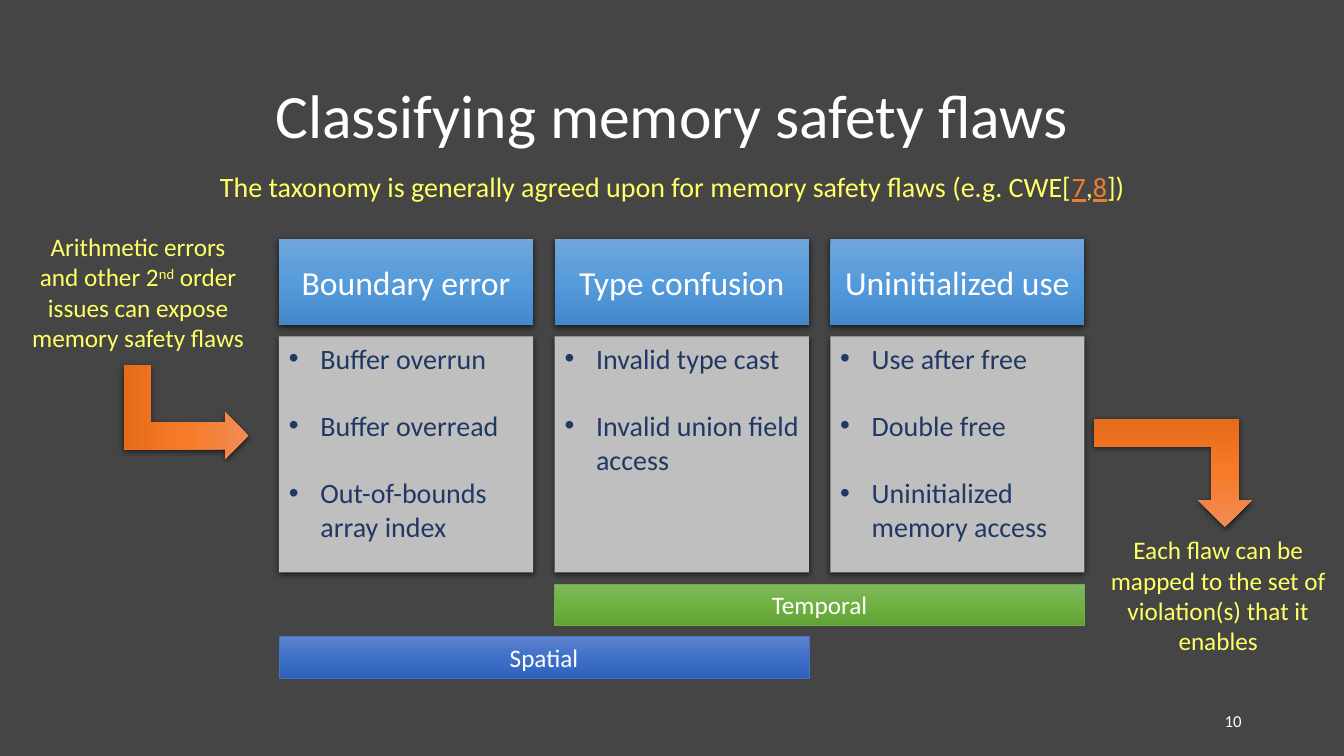
from copy import deepcopy

from lxml import etree
from pptx import Presentation
from pptx.dml.color import RGBColor
from pptx.enum.shapes import MSO_SHAPE
from pptx.enum.text import MSO_ANCHOR, MSO_AUTO_SIZE, PP_ALIGN
from pptx.oxml.ns import qn
from pptx.util import Pt

RECTANGLE, BENT_ARROW = MSO_SHAPE.RECTANGLE, MSO_SHAPE.BENT_UP_ARROW
TOP, MIDDLE = MSO_ANCHOR.TOP, MSO_ANCHOR.MIDDLE
LEFT, CENTER, RIGHT = PP_ALIGN.LEFT, PP_ALIGN.CENTER, PP_ALIGN.RIGHT
FIT_SHAPE, NO_FIT = MSO_AUTO_SIZE.SHAPE_TO_FIT_TEXT, MSO_AUTO_SIZE.NONE

CHARCOAL = RGBColor(0x45, 0x45, 0x45)
WHITE = RGBColor(0xFF, 0xFF, 0xFF)
YELLOW = RGBColor(0xFF, 0xFF, 0x66)
ORANGE = RGBColor(0xED, 0x7D, 0x31)
SILVER = RGBColor(0xBF, 0xBF, 0xBF)
NAVY = RGBColor(0x20, 0x38, 0x64)
GREEN = RGBColor(0x70, 0xAD, 0x47)
BLUE = RGBColor(0x44, 0x72, 0xC4)
# Gradients run from top to bottom
SKY_BLEND = RGBColor(0x71, 0xA6, 0xDB), RGBColor(0x55, 0x9B, 0xDB), RGBColor(0x44, 0x8A, 0xCA)
GREEN_BLEND = RGBColor(0x81, 0xB8, 0x61), RGBColor(0x6F, 0xB2, 0x42), RGBColor(0x62, 0xA3, 0x36)
BLUE_BLEND = RGBColor(0x61, 0x83, 0xCB), RGBColor(0x3E, 0x70, 0xCA), RGBColor(0x30, 0x62, 0xBB)
ORANGE_BLEND = RGBColor(0xF1, 0x8C, 0x57), RGBColor(0xF6, 0x7B, 0x28), RGBColor(0xE5, 0x6C, 0x19)


class SlideBuilder:
    font_name = "Calibri"

    def __init__(self, page):
        self.page = page
        page.background.fill.solid()
        page.background.fill.fore_color.rgb = CHARCOAL

    def add_text(self, box, paragraphs, size, color, align=CENTER, anchor=MIDDLE,
                 bullets=False, gap=0, **frame_format):
        """Each paragraph is a string or a list of (text, font format) pairs."""
        frame = box.text_frame
        frame_format = {"word_wrap": True, "vertical_anchor": anchor, **frame_format}
        for name, value in frame_format.items():
            setattr(frame, name, value)
        for index, content in enumerate(paragraphs):
            para = frame.paragraphs[0] if index == 0 else frame.add_paragraph()
            para.alignment = align
            para.space_before = Pt(gap if index else 0)
            if bullets:
                self.bullet(para)
            for text, extra in [(content, {})] if isinstance(content, str) else content:
                span = para.add_run()
                span.text = text
                font_format = {"name": self.font_name, "size": Pt(size), "color": color, **extra}
                for name, value in font_format.items():
                    if name == "color":
                        span.font.color.rgb = value
                    elif name == "baseline":
                        span._r.get_or_add_rPr().set(name, value)
                    else:
                        setattr(span.font, name, value)

    def bullet(self, para):
        properties = para._p.get_or_add_pPr()
        properties.set("marL", str(Pt(22.5)))
        properties.set("indent", str(-Pt(22.5)))
        etree.SubElement(properties, qn("a:buFont")).set("typeface", "Arial")
        etree.SubElement(properties, qn("a:buChar")).set("char", "•")

    def title(self, place, text):
        box = self.page.shapes.title
        for name, value in zip(("left", "top", "width", "height"), place):
            setattr(box, name, Pt(value))
        self.add_text(box, [text], 44, WHITE, auto_size=NO_FIT)

    def label(self, place, paragraphs, size, color, **text_format):
        box = self.page.shapes.add_textbox(*map(Pt, place))
        self.add_text(box, paragraphs, size, color, **text_format)
        return box

    def shape(self, kind, place, fill, line=None, shadow=True):
        """Fill is one colour or a tuple of three gradient colours."""
        shape = self.page.shapes.add_shape(kind, *map(Pt, place))
        if isinstance(fill, RGBColor):
            shape.fill.solid()
            shape.fill.fore_color.rgb = fill
        else:
            self.blend(shape, fill)
        if line is None:
            shape.line.fill.background()
        else:
            shape.line.color.rgb = line
            shape.line.width = Pt(0.5)
        shape.shadow.inherit = False
        if shadow:
            self.drop_shadow(shape)
        return shape

    def blend(self, shape, colors):
        shape.fill.gradient()
        shape.fill.gradient_angle = 270
        stop_list = shape._element.spPr.find(".//" + qn("a:gsLst"))
        stop_list.append(deepcopy(stop_list[-1]))
        for stop, color, position in zip(shape.fill.gradient_stops, colors, (0, 0.5, 1)):
            stop.color.rgb = color
            stop.position = position

    def drop_shadow(self, shape):
        effects = shape._element.spPr.find(qn("a:effectLst"))
        shadow = etree.SubElement(effects, qn("a:outerShdw"), blurRad=str(Pt(4.5)),
                                  dist=str(Pt(1.5)), dir="5400000", algn="ctr", rotWithShape="0")
        black = etree.SubElement(shadow, qn("a:srgbClr"), val="000000")
        etree.SubElement(black, qn("a:alpha"), val="63000")

    def bent_arrow(self, place, shaft=0.25, rotation=0, flip=False):
        arrow = self.shape(BENT_ARROW, place, ORANGE_BLEND)
        for index, value in enumerate((shaft, 0.25, 0.25)):
            arrow.adjustments[index] = value
        arrow.rotation = rotation
        if flip:
            arrow._element.spPr.find(qn("a:xfrm")).set("flipV", "1")
        return arrow

    def group(self, *shapes):
        self.page.shapes.add_group_shape(shapes)


def main():
    deck = Presentation()
    deck.slide_width, deck.slide_height = Pt(960), Pt(540)
    slide = SlideBuilder(deck.slides.add_slide(deck.slide_layouts[5]))

    # Title, introduction and page number
    slide.title((66, 28.8, 828, 104.4), "Classifying memory safety flaws")
    link = {"color": ORANGE, "underline": True}
    intro = [("The taxonomy is generally agreed upon for memory safety flaws (e.g. CWE[", {}),
             ("7", link), (",", {}), ("8", link), ("])", {})]
    slide.label((146.6, 117.7, 666.8, 31.5), [intro], 20, YELLOW,
                anchor=TOP, word_wrap=False, auto_size=FIT_SHAPE)
    slide.label((636, 500.5, 258, 28.8), ["10"], 12, WHITE, align=RIGHT)

    # Flaw classes with their examples
    flaws = {
        "Boundary error": ["Buffer overrun", "Buffer overread", "Out-of-bounds array index"],
        "Type confusion": ["Invalid type cast", "Invalid union field access"],
        "Uninitialized use": ["Use after free", "Double free", "Uninitialized memory access"],
    }
    first_left, column_width, pitch = 199.3, 181.6, 196.9
    column_lefts = [first_left + pitch * column for column in range(len(flaws))]
    for left, (name, examples) in zip(column_lefts, flaws.items()):
        header = slide.shape(RECTANGLE, (left, 170.6, column_width, 61.4), SKY_BLEND)
        slide.add_text(header, [name], 24, WHITE)
        card = slide.shape(RECTANGLE, (left, 240.2, column_width, 168.6), SILVER)
        slide.add_text(card, examples, 20, NAVY, align=LEFT, anchor=TOP,
                       bullets=True, gap=24, margin_right=Pt(5))

    # Violation bars, each spanning two columns
    bars = []
    for name, column, top, colors, edge in (("Temporal", 1, 417.2, GREEN_BLEND, GREEN),
                                            ("Spatial", 0, 454.7, BLUE_BLEND, BLUE)):
        place = (column_lefts[column], top, pitch + column_width, 29.5)
        bar = slide.shape(RECTANGLE, place, colors, line=edge, shadow=False)
        slide.add_text(bar, [name], 18, WHITE)
        bars.append(bar)
    slide.group(*bars)

    # Cause on the left
    cause = ["Arithmetic errors",
             [("and other 2", {}), ("nd", {"baseline": "30000"}),
              (" order issues can expose memory safety flaws", {})]]
    slide.group(
        slide.bent_arrow((99.4, 249.8, 67, 89.3), shaft=0.289, rotation=90),
        slide.label((7.9, 161.3, 181.4, 94.3), cause, 18, YELLOW, auto_size=FIT_SHAPE))

    # Consequence on the right
    consequence = "Each flaw can be mapped to the set of violation(s) that it enables"
    slide.group(
        slide.label((785.5, 378, 169.2, 94.3), [consequence], 18, YELLOW, auto_size=FIT_SHAPE),
        slide.bent_arrow((781.2, 299.5, 113, 77), flip=True))

    deck.save("out.pptx")


if __name__ == "__main__":
    main()
